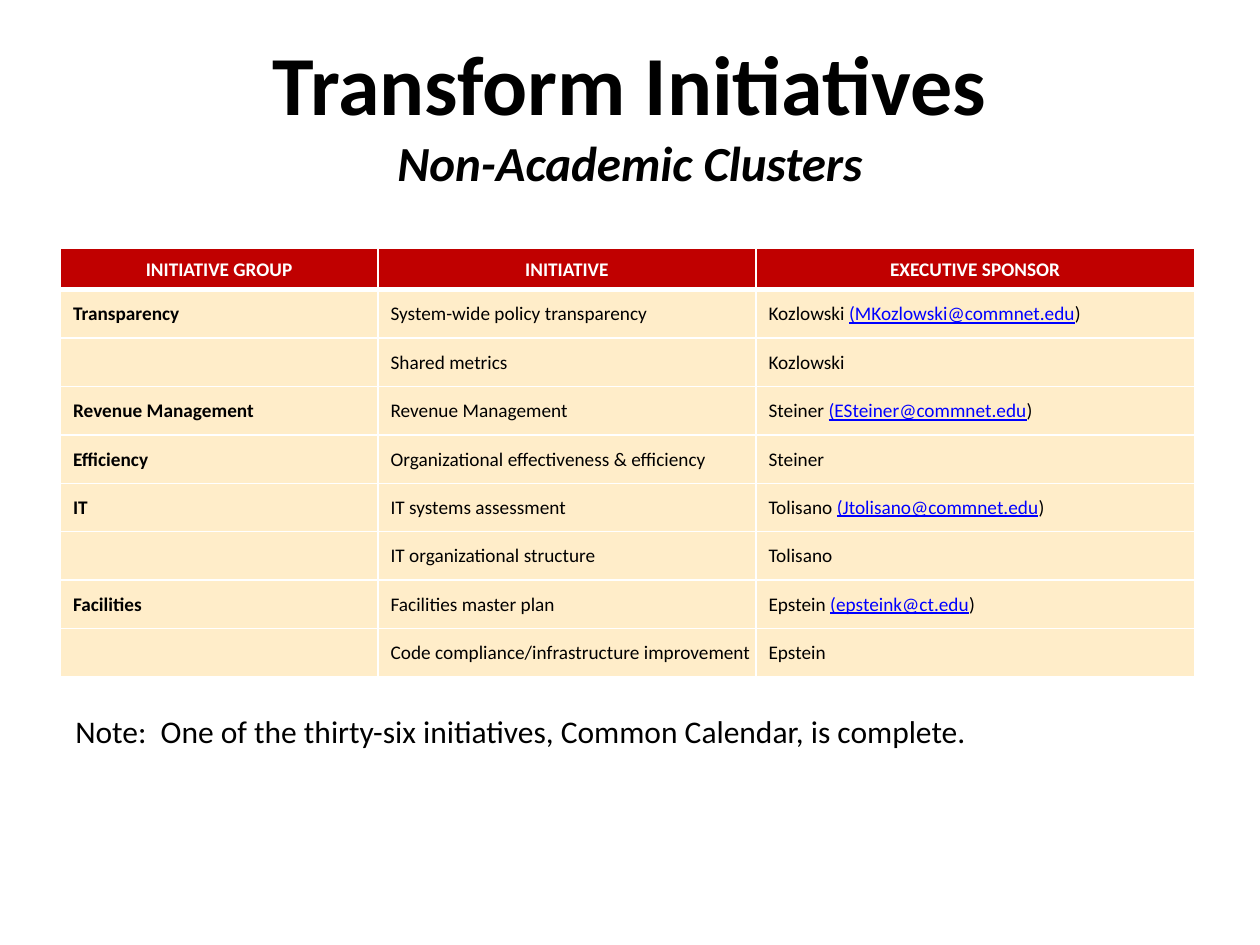
import pptx
import pptx.util
import pptx.dml.color
import pptx.enum.text
import pptx.oxml
import pptx.oxml.ns

Inches, Pt = pptx.util.Inches, pptx.util.Pt
ALIGN = pptx.enum.text.PP_ALIGN
FACE = "Calibri"
BLACK, WHITE, RED, CREAM, BLUE = "000000", "FFFFFF", "C00000", "FFEDC9", "0000FF"

HEADS = ["INITIATIVE GROUP", "INITIATIVE", "EXECUTIVE SPONSOR"]
# Group, initiative, sponsor, sponsor's address
ROWS = [
    ("Transparency", "System-wide policy transparency", "Kozlowski", "MKozlowski@commnet.edu"),
    ("", "Shared metrics", "Kozlowski", ""),
    ("Revenue Management", "Revenue Management", "Steiner", "ESteiner@commnet.edu"),
    ("Efficiency", "Organizational effectiveness & efficiency", "Steiner", ""),
    ("IT", "IT systems assessment", "Tolisano", "Jtolisano@commnet.edu"),
    ("", "IT organizational structure", "Tolisano", ""),
    ("Facilities", "Facilities master plan", "Epstein", "epsteink@ct.edu"),
    ("", "Code compliance/infrastructure improvement", "Epstein", ""),
]
COLS = [2.52, 3, 3.48]


def paint(part, color):
    """Colour a font or a fill."""
    if hasattr(part, "solid"):
        part.solid()
        part.fore_color.rgb = pptx.dml.color.RGBColor.from_string(color)
    else:
        part.color.rgb = pptx.dml.color.RGBColor.from_string(color)


def style(font, size, color=BLACK, bold=False):
    font.name, font.size, font.bold = FACE, Pt(size), bold
    paint(font, color)


def add_text(slide, left, top, width, height):
    shape = slide.shapes.add_textbox(Inches(left), Inches(top), Inches(width), Inches(height))
    shape.text_frame.word_wrap = True
    return shape.text_frame


def add_title(slide, left, top, width, height):
    frame = add_text(slide, left, top, width, height)
    frame.margin_left = frame.margin_right = frame.margin_top = frame.margin_bottom = 0
    para = frame.paragraphs[0]
    para.alignment = ALIGN.CENTER
    main = para.add_run()
    main.text = "Transform Initiatives"
    style(main.font, 48, bold=True)
    para.add_line_break()
    sub = para.add_run()
    sub.text = "Non-Academic Clusters"
    style(sub.font, 28, bold=True)
    sub.font.italic = True


def add_edges(cell, top, base):
    """Draw white borders, with the given widths above and below."""
    props = cell._tc.get_or_add_tcPr()
    for side, width in zip("LRTB", (1, 1, top, base)):
        props.append(pptx.oxml.parse_xml(
            f'<a:ln{side} {pptx.oxml.ns.nsdecls("a")} w="{Pt(width)}"><a:solidFill>'
            f'<a:srgbClr val="{WHITE}"/></a:solidFill></a:ln{side}>'))


def fill_cell(cell, text, mail, head, first, below):
    add_edges(cell, 3 if below else 1, 3 if head else 1)
    paint(cell.fill, RED if head else CREAM)
    cell.vertical_anchor = pptx.enum.text.MSO_ANCHOR.MIDDLE
    pad = Inches(0.01 if head else 0.1)
    cell.margin_left = cell.margin_top = pad
    cell.margin_right = Inches(0.01)
    cell.margin_bottom = 0 if head else pad
    para = cell.text_frame.paragraphs[0]
    para.alignment = ALIGN.CENTER if head else ALIGN.LEFT
    style(para.font, 11, WHITE if head else BLACK, head or first)
    if not text:
        # An empty cell takes its line height from the end mark
        end = para._p.get_or_add_endParaRPr()
        end.set("sz", "1100")
        return
    para.add_run().text = text + " " if mail else text
    if mail:
        link = para.add_run()
        link.text = "(" + mail
        link.font.underline = True
        paint(link.font, BLUE)
        para.add_run().text = ")"


def add_grid(slide, left, top, width, height):
    head_high = 0.33
    table = slide.shapes.add_table(len(ROWS) + 1, len(COLS), Inches(left), Inches(top),
                                   Inches(width), Inches(height)).table
    for col, wide in zip(table.columns, COLS):
        col.width = Inches(wide)
    for num, row in enumerate(table.rows):
        row.height = Inches((height - head_high) / len(ROWS) if num else head_high)
        *texts, mail = ROWS[num - 1] if num else (*HEADS, "")
        for pos, text in enumerate(texts):
            fill_cell(table.cell(num, pos), text, mail if pos == 2 else "",
                      num == 0, pos == 0, num == 1)


def add_note(slide, left, top, width, height):
    para = add_text(slide, left, top, width, height).paragraphs[0]
    para.text = "Note:  One of the thirty-six initiatives, Common Calendar, is complete."
    style(para.font, 18)


def main():
    deck = pptx.Presentation()
    deck.slide_width, deck.slide_height = Inches(10), Inches(7.5)
    slide = deck.slides.add_slide(deck.slide_layouts[6])
    add_title(slide, 0, 0.25, 10, 1.28)
    add_grid(slide, 0.48, 1.97, 9, 3.39)
    add_note(slide, 0.5, 5.6, 7.33, 0.4)
    deck.save("out.pptx")


if __name__ == "__main__":
    main()
